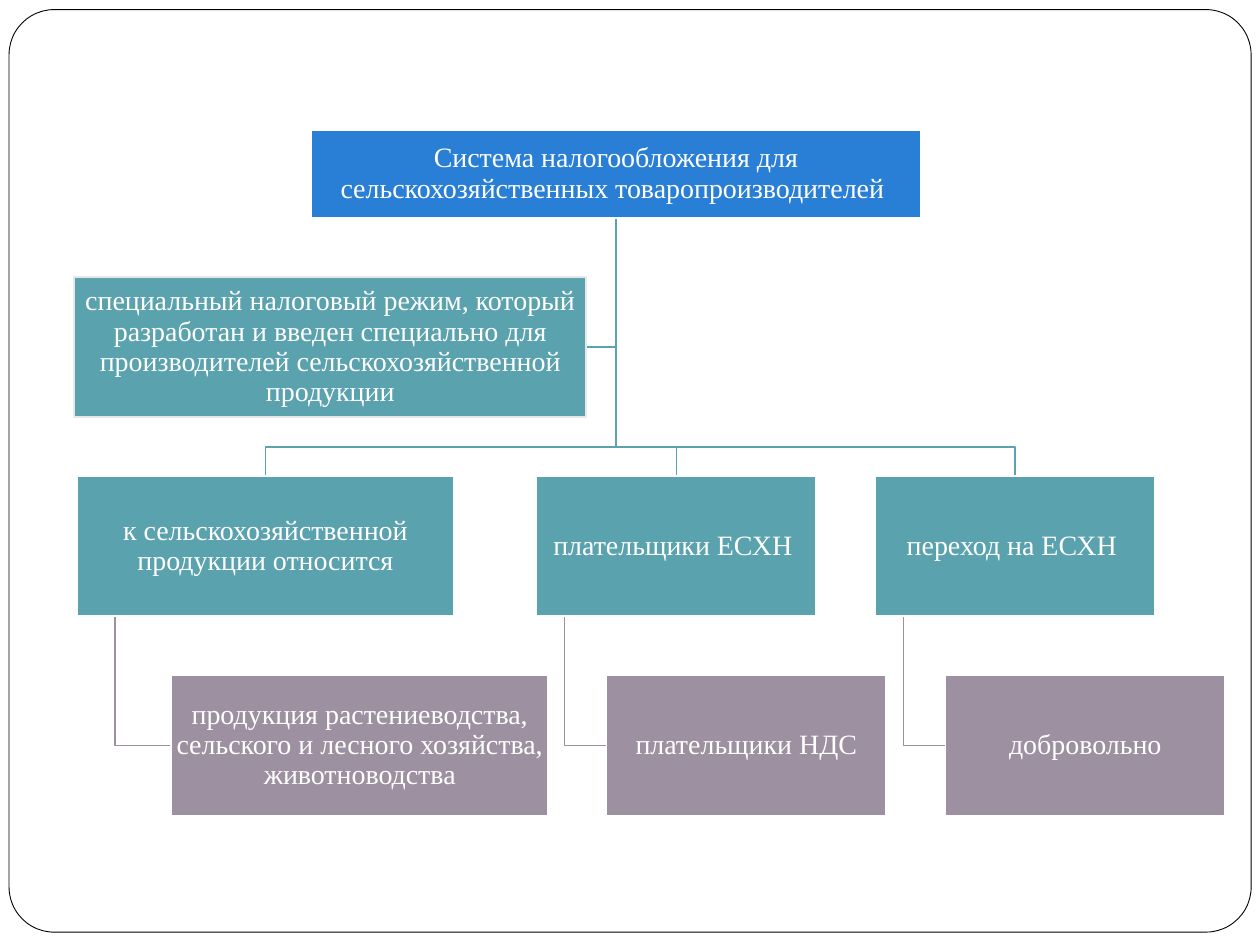
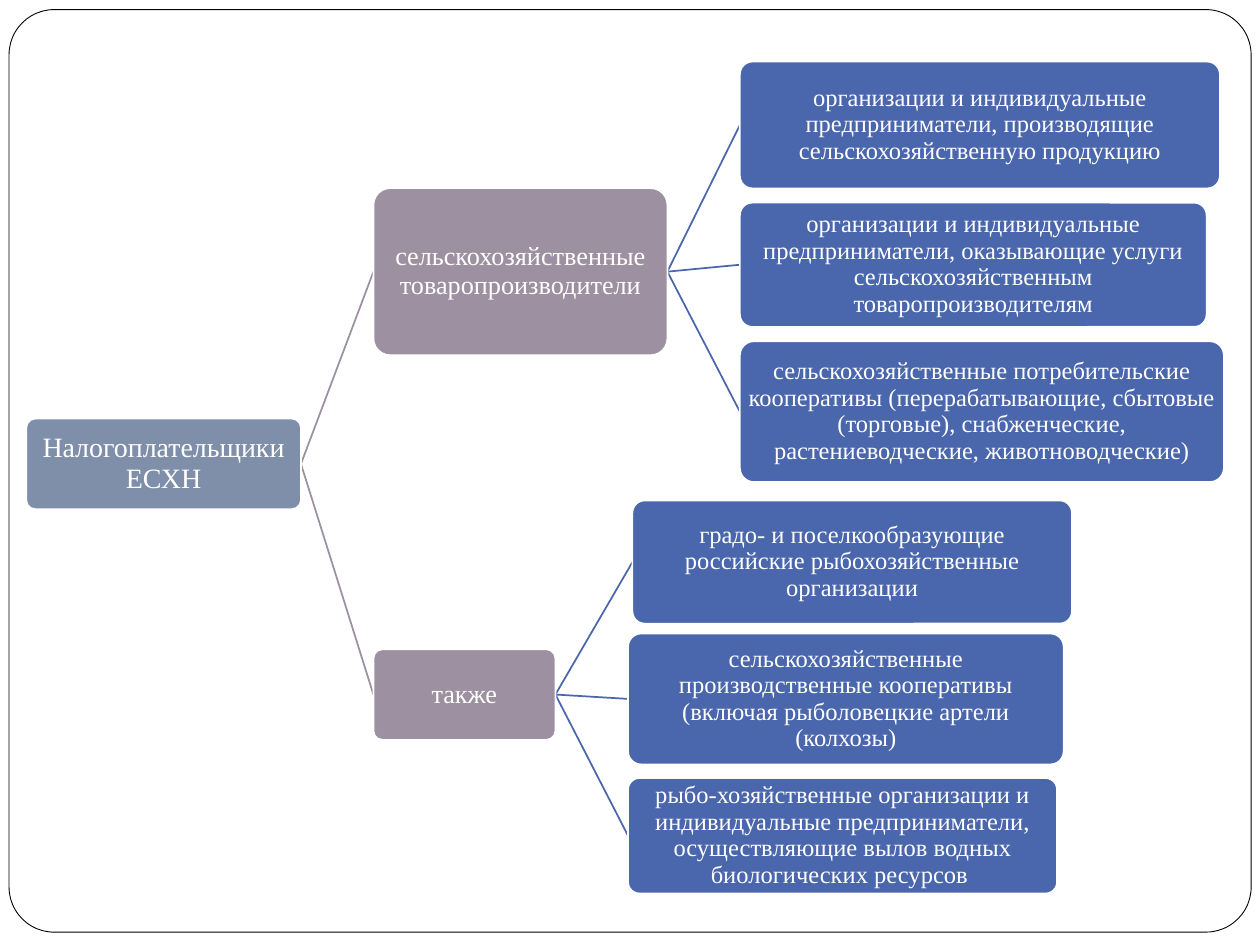
"""Build two diagram slides on the tax system for agricultural producers."""
from dataclasses import dataclass

from lxml import etree
from pptx import Presentation
from pptx.dml.color import RGBColor
from pptx.enum.shapes import MSO_CONNECTOR, MSO_SHAPE
from pptx.enum.text import MSO_ANCHOR, PP_ALIGN
from pptx.oxml.ns import qn
from pptx.slide import Slide
from pptx.util import Pt

RECT = MSO_SHAPE.RECTANGLE
ROUNDED = MSO_SHAPE.ROUNDED_RECTANGLE
STRAIGHT = MSO_CONNECTOR.STRAIGHT

WHITE = RGBColor(0xFF, 0xFF, 0xFF)
BLACK = RGBColor(0x00, 0x00, 0x00)
PALE = RGBColor(0xE7, 0xE7, 0xE7)
BLUE = RGBColor(0x29, 0x7F, 0xD5)
TEAL = RGBColor(0x5A, 0xA2, 0xAE)
MAUVE = RGBColor(0x9D, 0x90, 0xA0)
SLATE = RGBColor(0x7F, 0x8F, 0xA9)
INDIGO = RGBColor(0x4A, 0x66, 0xAC)

INSET = Pt(1)
FRAME_FORMAT = {"margin_left": INSET, "margin_right": INSET, "margin_top": INSET,
                "margin_bottom": INSET, "word_wrap": True,
                "vertical_anchor": MSO_ANCHOR.MIDDLE}
PARAGRAPH_FORMAT = {"alignment": PP_ALIGN.CENTER, "line_spacing": 0.9}
FONT_FORMAT = {"name": "Times New Roman"}

TOPIC_TOP, DETAIL_TOP, ROW_HEIGHT = 272.2, 386, 80
BUS_Y = TOPIC_TOP - 16.6


@dataclass(frozen=True)
class Box:
    """A filled box with centred text; lengths are in points."""
    text: str
    left: float
    top: float
    width: float
    height: float
    fill: RGBColor
    size: float = 16
    outline: RGBColor = WHITE
    children: tuple["Box", ...] = ()

    @property
    def right(self) -> float:
        """Return the right edge."""
        return self.left + self.width

    @property
    def bottom(self) -> float:
        """Return the bottom edge."""
        return self.top + self.height

    @property
    def center_x(self) -> float:
        """Return the horizontal centre."""
        return self.left + self.width / 2

    @property
    def center_y(self) -> float:
        """Return the vertical centre."""
        return self.top + self.height / 2


@dataclass(frozen=True)
class Branch:
    """A topic with the detail that hangs below it."""
    topic: str
    detail: str
    left: float
    width: float

    def topic_box(self) -> Box:
        """Return the upper box."""
        return Box(self.topic, self.left, TOPIC_TOP, self.width, ROW_HEIGHT, TEAL)

    def detail_box(self) -> Box:
        """Return the lower box, indented by a quarter of the width."""
        return Box(self.detail, self.left + self.width / 4, DETAIL_TOP,
                   self.width, ROW_HEIGHT, MAUVE)


SYSTEM = Box("Система налогообложения для сельскохозяйственных товаропроизводителей ",
             178, 74.2, 348, 50.4, BLUE)
REGIME = Box("специальный налоговый режим, который разработан и введен специально для "
             "производителей сельскохозяйственной продукции",
             42.5, 158.4, 292.5, ROW_HEIGHT, TEAL, outline=PALE)
BRANCHES = (
    Branch("к сельскохозяйственной продукции относится",
           "продукция растениеводства, сельского и лесного хозяйства, животноводства",
           44, 215.5),
    Branch("плательщики ЕСХН ", "плательщики НДС", 306.6, 159.8),
    Branch("переход на ЕСХН ", "добровольно", 500.3, 159.8),
)

PRODUCERS = Box(
    "сельскохозяйственные товаропроизводители", 213.4, 107.5, 168, 95.5, MAUVE, 15,
    children=(
        Box("организации и индивидуальные предприниматели, производящие "
            "сельскохозяйственную продукцию", 422.8, 35.2, 274.3, 72.5, INDIGO, 14),
        Box("организации и индивидуальные предприниматели, оказывающие услуги "
            "сельскохозяйственным товаропроизводителям",
            422.8, 115.8, 266.7, 71, INDIGO, 14),
        Box("сельскохозяйственные потребительские кооперативы (перерабатывающие, "
            "сбытовые (торговые), снабженческие, растениеводческие, животноводческие)",
            422.8, 195, 276.6, 80.5, INDIGO, 14),
    ))
OTHERS = Box(
    "также", 213.4, 371, 104, 51.8, MAUVE, 15,
    children=(
        Box("градо- и поселкообразующие российские рыбохозяйственные организации",
            361.4, 286, 251.2, 70.4, INDIGO, 14),
        Box("сельскохозяйственные производственные кооперативы (включая "
            "рыболовецкие артели (колхозы)", 358.9, 362, 248.9, 74.8, INDIGO, 14),
        Box("рыбо-хозяйственные организации и индивидуальные предприниматели, "
            "осуществляющие вылов водных биологических ресурсов ",
            358.9, 444.6, 245.2, 66, INDIGO, 14),
    ))
TAXPAYERS = Box("Налогоплательщики ЕСХН", 15, 239.2, 157, 51.8, SLATE,
                children=(PRODUCERS, OTHERS))


def apply(target: object, values: dict) -> None:
    """Set every attribute in values on target."""
    for attribute, value in values.items():
        setattr(target, attribute, value)


def draw_box(slide: Slide, box: Box, geometry: MSO_SHAPE,
             rounding: float = 0.1, weight: float = 1) -> None:
    """Draw a box and its text, if any."""
    shape = slide.shapes.add_shape(geometry, Pt(box.left), Pt(box.top),
                                   Pt(box.width), Pt(box.height))
    shape.shadow.inherit = False
    if geometry == ROUNDED:
        shape.adjustments[0] = rounding
    shape.fill.solid()
    shape.fill.fore_color.rgb = box.fill
    shape.line.color.rgb = box.outline
    shape.line.width = Pt(weight)
    if box.text:
        apply(shape.text_frame, FRAME_FORMAT)
        paragraph = shape.text_frame.paragraphs[0]
        apply(paragraph, PARAGRAPH_FORMAT)
        run = paragraph.add_run()
        run.text = box.text
        apply(run.font, FONT_FORMAT | {"size": Pt(box.size)})
        run.font.color.rgb = WHITE


def draw_path(slide: Slide, points: list[tuple[float, float]], color: RGBColor) -> None:
    """Draw an open line with right-angled bends."""
    start, *rest = [(Pt(x), Pt(y)) for x, y in points]
    builder = slide.shapes.build_freeform(*start)
    builder.add_line_segments(rest, close=False)
    path = builder.convert_to_shape()
    path.shadow.inherit = False
    path.fill.background()
    path.line.color.rgb = color
    path.line.width = Pt(1)


def draw_link(slide: Slide, parent: Box, child: Box) -> None:
    """Join the right side of a parent to the left side of its child."""
    link = slide.shapes.add_connector(STRAIGHT, Pt(parent.right), Pt(parent.center_y),
                                      Pt(child.left), Pt(child.center_y))
    link.line.color.rgb = child.fill
    link.line.width = Pt(1)
    etree.SubElement(link.element.spPr, qn("a:effectLst"))


def draw_tree(slide: Slide, node: Box) -> None:
    """Draw a node over its links, then each of its children."""
    for child in node.children:
        draw_link(slide, node, child)
    draw_box(slide, node, ROUNDED)
    for child in node.children:
        draw_tree(slide, child)


def add_framed_slide(deck: Presentation) -> Slide:
    """Add a blank slide with the shared rounded frame."""
    slide = deck.slides.add_slide(deck.slide_layouts[6])
    frame = Box("", 5.2, 5.5, 709.8, 527.2, WHITE, outline=BLACK)
    draw_box(slide, frame, ROUNDED, rounding=0.049, weight=0.5)
    return slide


def build_system_slide(deck: Presentation) -> None:
    """Draw the tax system with its side note and three branches."""
    slide = add_framed_slide(deck)
    trunk = (SYSTEM.center_x, SYSTEM.bottom)
    draw_path(slide, [trunk, (SYSTEM.center_x, REGIME.center_y),
                      (REGIME.right, REGIME.center_y)], TEAL)
    boxes = [SYSTEM, REGIME]
    for branch in BRANCHES:
        topic, detail = branch.topic_box(), branch.detail_box()
        stem_x = topic.left + topic.width / 10
        draw_path(slide, [trunk, (SYSTEM.center_x, BUS_Y), (topic.center_x, BUS_Y),
                          (topic.center_x, topic.top)], TEAL)
        draw_path(slide, [(stem_x, topic.bottom), (stem_x, detail.center_y),
                          (detail.left, detail.center_y)], MAUVE)
        boxes += [topic, detail]
    for box in boxes:
        draw_box(slide, box, RECT)


def main() -> None:
    """Build and save the deck."""
    deck = Presentation()
    deck.slide_width, deck.slide_height = Pt(720), Pt(540)
    build_system_slide(deck)
    draw_tree(add_framed_slide(deck), TAXPAYERS)
    deck.save("out.pptx")


if __name__ == "__main__":
    main()
